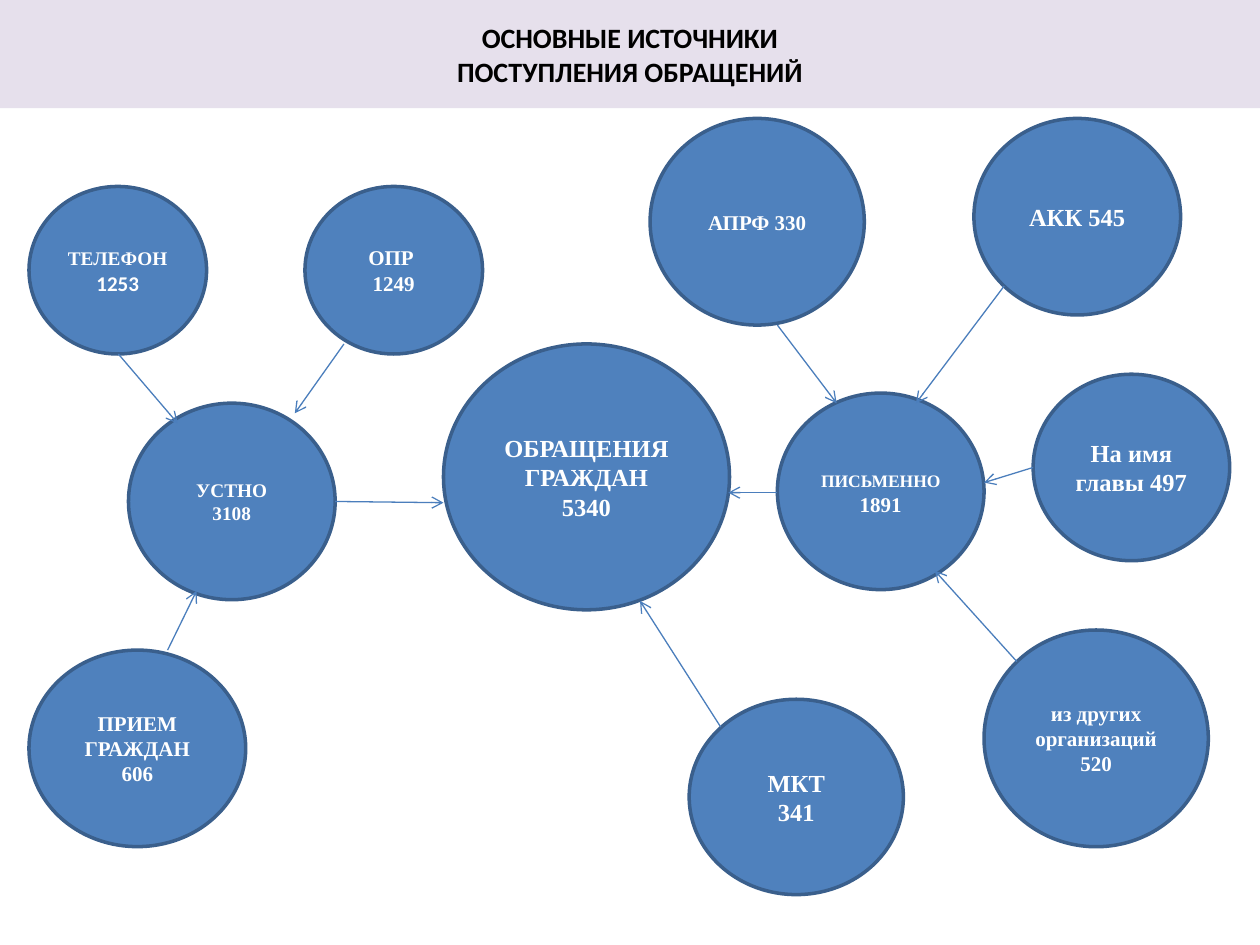
from typing import NamedTuple

from lxml import etree
from pptx import Presentation
from pptx import util as u
from pptx.dml.color import RGBColor
from pptx.enum import shapes, text
from pptx.oxml import ns

HUES = {"band": "E6E0EC", "title": "000000", "disc": "4F81BD",
        "rim": "3A5F8C", "arrow": "4B7EBC", "label": "FFFFFF"}
SERIF = "Times New Roman"
SANS = "Calibri"


class Run(NamedTuple):
    words: str
    size: float
    font: str = SERIF


class Disc(NamedTuple):
    left: float
    top: float
    width: float
    height: float
    paras: list[list[Run]]


class Arrow(NamedTuple):
    x1: float
    y1: float
    x2: float
    y2: float


TITLE = [[Run("ОСНОВНЫЕ ИСТОЧНИКИ\vПОСТУПЛЕНИЯ ОБРАЩЕНИЙ", 16, SANS)]]

DISCS = [
    Disc(3.52, 2.73, 2.27, 2.11, [[Run("ОБРАЩЕНИЯ ГРАЖДАН 5340", 14)]]),
    Disc(0.23, 1.48, 1.41, 1.33, [[Run("ТЕЛЕФОН", 11), Run(" 1253", 12, SANS)]]),
    Disc(2.42, 1.48, 1.41, 1.33, [[Run("ОПР ", 12)], [Run("1249", 12)]]),
    Disc(0.23, 5.16, 1.72, 1.56, [[Run("ПРИЕМ ГРАЖДАН 606", 12)]]),
    Disc(6.17, 3.12, 1.64, 1.56, [[Run("ПИСЬМЕННО", 10), Run(" 1891", 12)]]),
    Disc(5.47, 5.55, 1.7, 1.55, [[Run("МКТ", 14)], [Run("341", 14)]]),
    Disc(7.81, 5, 1.78, 1.72, [[Run("из других организаций 520", 12)]]),
    Disc(8.2, 2.97, 1.56, 1.48, [[Run("На имя главы 497", 14)]]),
    Disc(7.73, 0.94, 1.64, 1.56, [[Run("АКК 545", 14)]]),
    Disc(5.16, 0.94, 1.7, 1.64, [[Run("АПРФ 330", 12)]]),
    Disc(1.02, 3.2, 1.64, 1.56, [[Run("УСТНО", 11)], [Run("3108", 11)]]),
]

ARROWS = [
    Arrow(6.17, 2.58, 6.64, 3.2),
    Arrow(7.97, 2.27, 7.27, 3.2),
    Arrow(8.2, 3.71, 7.81, 3.83),
    Arrow(8.07, 5.25, 7.42, 4.53),
    Arrow(6.17, 3.91, 5.78, 3.91),
    Arrow(2.66, 3.98, 3.52, 3.99),
    Arrow(0.94, 2.81, 1.41, 3.36),
    Arrow(2.73, 2.73, 2.34, 3.28),
    Arrow(1.33, 5.16, 1.56, 4.69),
    Arrow(5.72, 5.77, 5.08, 4.77),
]


def tint(name: str) -> RGBColor:
    """Return the named colour."""
    return RGBColor.from_string(HUES[name])


def write(shape, paras: list[list[Run]], hue: str) -> None:
    """Fill a shape with centred bold text, run by run."""
    frame = shape.text_frame
    frame.word_wrap = True
    frame.vertical_anchor = text.MSO_ANCHOR.MIDDLE
    for i, runs in enumerate(paras):
        para = frame.add_paragraph() if i else frame.paragraphs[0]
        para.alignment = text.PP_ALIGN.CENTER
        for item in runs:
            for j, line in enumerate(item.words.split("\v")):
                if j:
                    para.add_line_break()
                run = para.add_run()
                run.text = line
                run.font.name = item.font
                run.font.size = u.Pt(item.size)
                run.font.bold = True
                run.font.color.rgb = tint(hue)


def draw_band(slide) -> None:
    """Draw the title band."""
    band = slide.shapes.add_shape(
        shapes.MSO_SHAPE.RECTANGLE, 0, 0, u.Inches(10), u.Inches(0.86))
    band.shadow.inherit = False
    band.fill.solid()
    band.fill.fore_color.rgb = tint("band")
    band.line.fill.background()
    write(band, TITLE, "title")


def draw_disc(slide, disc: Disc) -> None:
    """Draw one labelled ellipse."""
    oval = slide.shapes.add_shape(
        shapes.MSO_SHAPE.OVAL, *(u.Inches(n) for n in disc[:4]))
    oval.shadow.inherit = False
    oval.fill.solid()
    oval.fill.fore_color.rgb = tint("disc")
    oval.line.color.rgb = tint("rim")
    oval.line.width = u.Pt(2)
    write(oval, disc.paras, "label")


def draw_arrow(slide, arrow: Arrow) -> None:
    """Draw one thin line with an open arrowhead at its end."""
    link = slide.shapes.add_connector(
        shapes.MSO_CONNECTOR.STRAIGHT, *(u.Inches(n) for n in arrow))
    link.line.color.rgb = tint("arrow")
    link.line.width = u.Pt(0.75)
    props = link.element.spPr
    etree.SubElement(props.find(ns.qn("a:ln")), ns.qn("a:tailEnd"), type="arrow")
    etree.SubElement(props, ns.qn("a:effectLst"))


def main() -> None:
    """Build the slide and save it."""
    deck = Presentation()
    deck.slide_width = u.Inches(10)
    deck.slide_height = u.Inches(7.5)
    slide = deck.slides.add_slide(deck.slide_layouts[6])
    draw_band(slide)
    for disc in DISCS:
        draw_disc(slide, disc)
    for arrow in ARROWS:
        draw_arrow(slide, arrow)
    deck.save("out.pptx")


if __name__ == "__main__":
    main()
